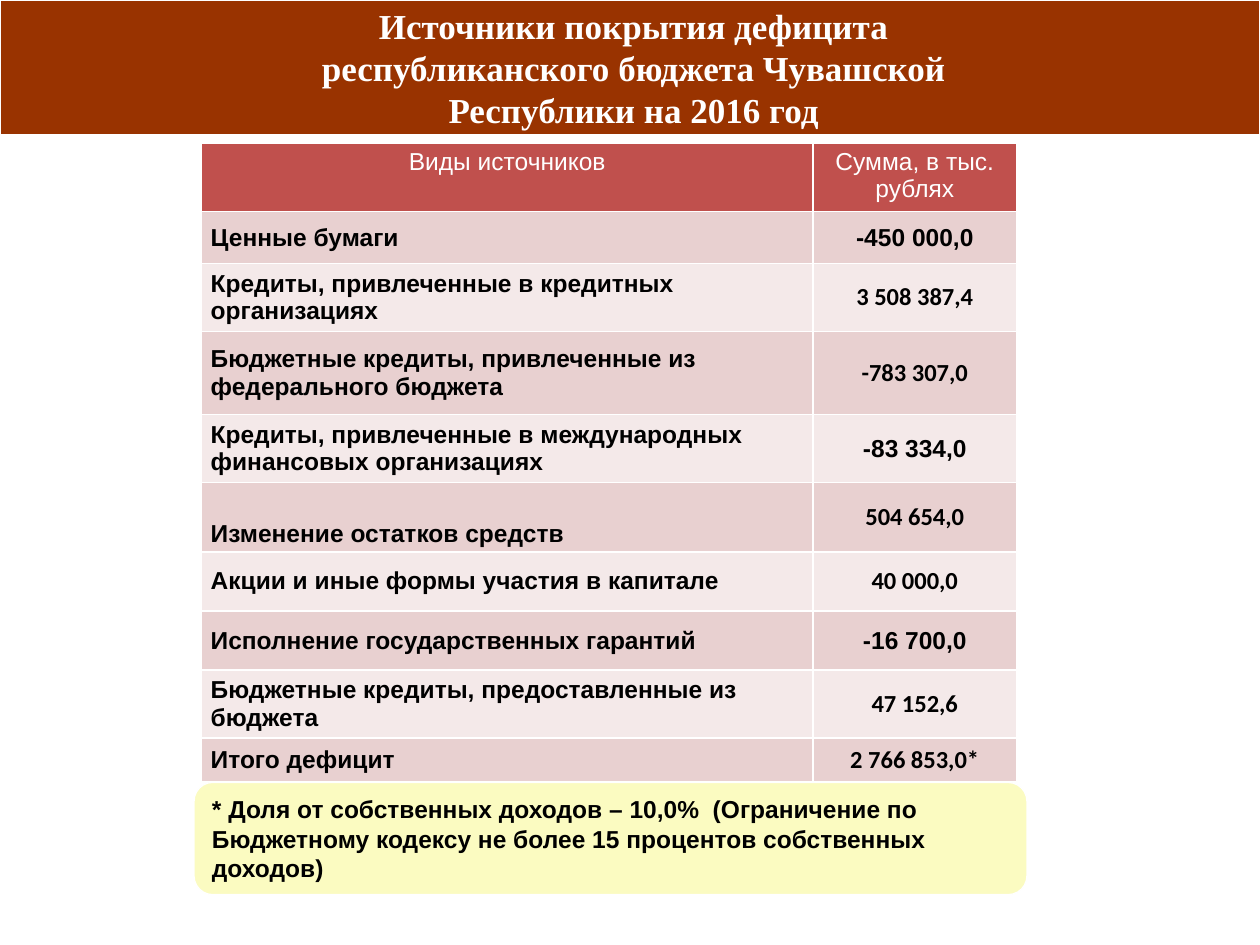
from pptx import Presentation
from pptx.dml.color import RGBColor
from pptx.enum.shapes import MSO_SHAPE as SHAPE
from pptx.enum.text import MSO_ANCHOR as ANCHOR, PP_ALIGN as ALIGN
from pptx.oxml import parse_xml
from pptx.oxml.ns import nsdecls
from pptx.util import Pt

WHITE = RGBColor(0xFF, 0xFF, 0xFF)
BLACK = RGBColor(0, 0, 0)
BROWN = RGBColor(0x99, 0x33, 0x00)
RED = RGBColor(0xC0, 0x50, 0x4D)
ROSE = RGBColor(0xE8, 0xD0, 0xD0)
PALE = RGBColor(0xF4, 0xE9, 0xE9)
YELLOW = RGBColor(0xFB, 0xFB, 0xC1)

TITLE = "Источники покрытия дефицита республиканского бюджета Чувашской Республики на 2016 год"
NOTE = ("* Доля от собственных доходов – 10,0%  (Ограничение по Бюджетному кодексу "
        "не более 15 процентов собственных доходов)")
HEADER = ("Виды источников", "Сумма, в тыс. рублях")
TWO_LINES = 38.9
SOURCES = [
    ("Ценные бумаги", "-450 000,0", "Arial", 29.5),
    ("Кредиты, привлеченные в кредитных организациях", "3 508 387,4", "Calibri", TWO_LINES),
    ("Бюджетные кредиты, привлеченные из федерального бюджета", "-783 307,0", "Calibri", 47.5),
    ("Кредиты, привлеченные в международных финансовых организациях", "-83 334,0", "Arial",
     TWO_LINES),
    ("Изменение остатков средств", "504 654,0", "Calibri", 39.6),
    ("Акции и иные формы участия в капитале", "40 000,0", "Calibri", 33.8),
    ("Исполнение государственных гарантий", "-16 700,0", "Arial", 33.8),
    ("Бюджетные кредиты, предоставленные из бюджета", "47 152,6", "Calibri", TWO_LINES),
    ("Итого дефицит", "2 766 853,0*", "Calibri", 25),
]


def write(tf, text, size, font, color, bold=True, align=ALIGN.LEFT):
    """Put one styled run into the first paragraph of a text frame."""
    tf.word_wrap = True
    p = tf.paragraphs[0]
    p.alignment = align
    r = p.add_run()
    r.text = text
    r.font.size = Pt(size)
    r.font.name = font
    r.font.bold = bold
    r.font.color.rgb = color


def add_panel(s, kind, box, fill):
    """Add a filled shape with a thin white outline."""
    sp = s.shapes.add_shape(kind, *map(Pt, box))
    sp.shadow.inherit = False
    sp.fill.solid()
    sp.fill.fore_color.rgb = fill
    sp.line.color.rgb = WHITE
    sp.line.width = Pt(0.75)
    return sp


def add_title(s, left, top, width, height):
    """Draw the title band with its centred heading."""
    add_panel(s, SHAPE.RECTANGLE, (left, top, width, height), BROWN)
    tb = s.shapes.add_textbox(Pt(left + 134.6), Pt(top), Pt(455), Pt(height))
    tf = tb.text_frame
    tf.margin_left = tf.margin_right = Pt(25)
    tf.vertical_anchor = ANCHOR.MIDDLE
    write(tf, TITLE, 20, "Times New Roman", WHITE, align=ALIGN.CENTER)


def style_cell(cell, fill):
    """Set the fill, margins and white borders of a table cell."""
    cell.fill.solid()
    cell.fill.fore_color.rgb = fill
    cell.margin_left = cell.margin_right = Pt(5.2)
    cell.margin_top = cell.margin_bottom = Pt(2.6)
    tc_pr = cell._tc.get_or_add_tcPr()
    for i, side in enumerate("LRTB"):
        tc_pr.insert(i, parse_xml(
            f'<a:ln{side} {nsdecls("a")} w="{Pt(1)}"><a:solidFill>'
            f'<a:srgbClr val="{WHITE}"/></a:solidFill></a:ln{side}>'))


def add_sources(s, left, top, width, height):
    """Draw the table of deficit sources."""
    frame = s.shapes.add_table(len(SOURCES) + 1, 2, Pt(left), Pt(top), Pt(width), Pt(height))
    table = frame.table
    table.columns[0].width = Pt(width * 0.75)
    table.columns[1].width = Pt(width * 0.25)
    table.rows[0].height = Pt(TWO_LINES)
    for col, text in enumerate(HEADER):
        cell = table.cell(0, col)
        style_cell(cell, RED)
        write(cell.text_frame, text, 14, "Arial", WHITE, False, ALIGN.CENTER)
    for row, (name, amount, font, row_height) in enumerate(SOURCES, 1):
        table.rows[row].height = Pt(row_height)
        label, value = table.cell(row, 0), table.cell(row, 1)
        for cell in (label, value):
            style_cell(cell, ROSE if row % 2 else PALE)
            cell.vertical_anchor = ANCHOR.MIDDLE
        if name.startswith("Изменение"):
            label.vertical_anchor = ANCHOR.BOTTOM
        write(label.text_frame, name, 14, "Arial", BLACK)
        write(value.text_frame, amount, 14, font, BLACK, align=ALIGN.CENTER)


def add_note(s, *box):
    """Draw the rounded footnote panel."""
    sp = add_panel(s, SHAPE.ROUNDED_RECTANGLE, box, YELLOW)
    sp.text_frame.vertical_anchor = ANCHOR.MIDDLE
    write(sp.text_frame, NOTE, 14, "Arial", BLACK)


def main():
    """Build the slide and save it."""
    prs = Presentation()
    prs.slide_width, prs.slide_height = Pt(720), Pt(540)
    s = prs.slides.add_slide(prs.slide_layouts[6])
    add_title(s, 0, 0, 720, 77)
    add_sources(s, 115.2, 82.1, 465.8, 364.8)
    add_note(s, 110.9, 447.1, 475.9, 64.1)
    prs.save("out.pptx")


if __name__ == "__main__":
    main()
